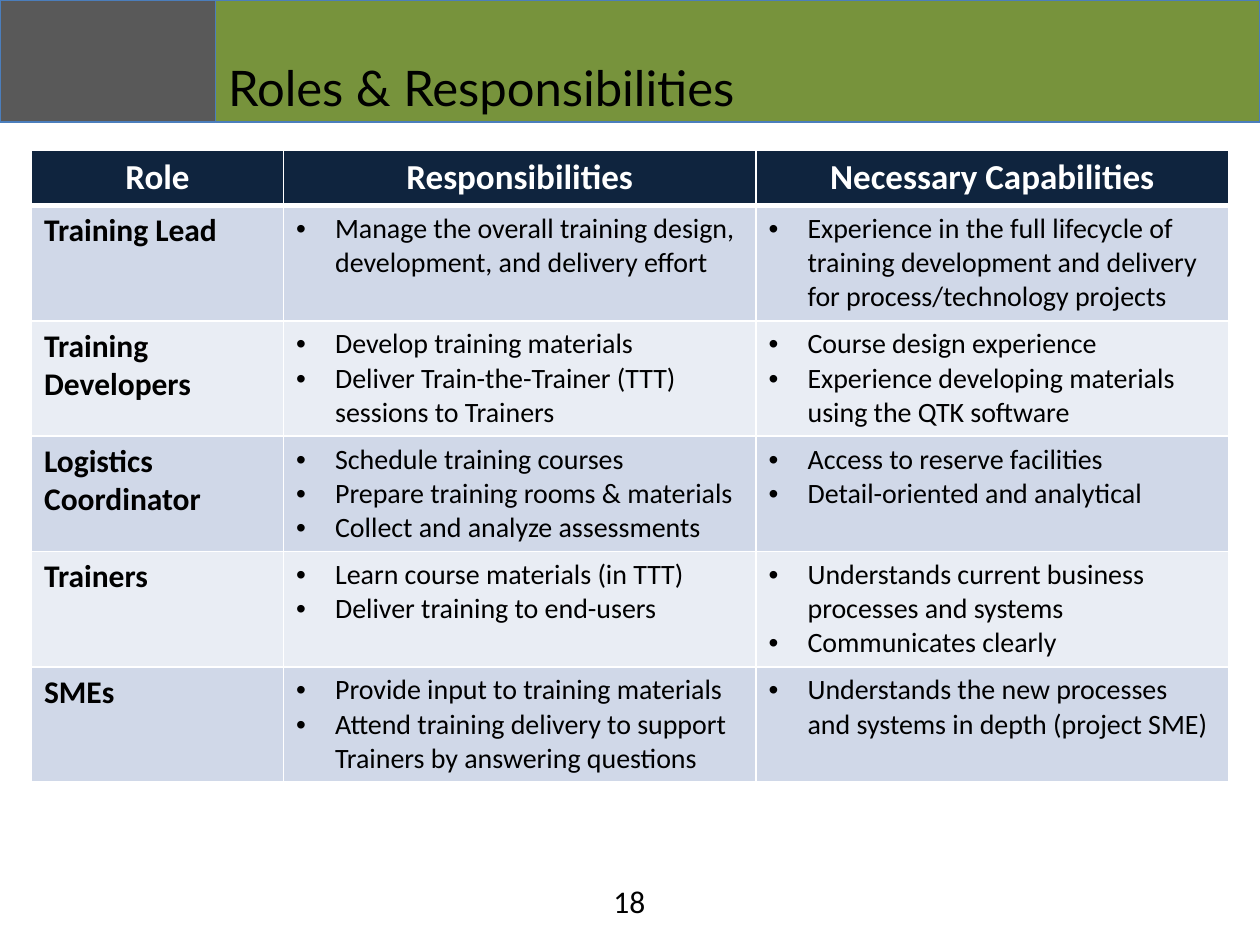
from lxml import etree
from pptx import Presentation
from pptx.dml.color import RGBColor
from pptx.enum import shapes, text
from pptx.oxml.ns import qn
from pptx.util import Inches, Pt

BLACK, WHITE = "000000", "FFFFFF"
HEADER_FILL = "0F243E"
BAND_FILLS = ("D0D8E8", "E9EDF4")
HEADINGS = ("Role", "Responsibilities", "Necessary Capabilities")
ROLES = [
    ("Training Lead",
     ["Manage the overall training design, development, and delivery effort"],
     ["Experience in the full lifecycle of training development and delivery "
      "for process/technology projects"]),
    ("Training Developers",
     ["Develop training materials",
      "Deliver Train-the-Trainer (TTT) sessions to Trainers"],
     ["Course design experience",
      "Experience developing materials using the QTK software"]),
    ("Logistics Coordinator",
     ["Schedule training courses",
      "Prepare training rooms & materials",
      "Collect and analyze assessments"],
     ["Access to reserve facilities",
      "Detail-oriented and analytical"]),
    ("Trainers",
     ["Learn course materials (in TTT)",
      "Deliver training to end-users"],
     ["Understands current business processes and systems",
      "Communicates clearly"]),
    ("SMEs",
     ["Provide input to training materials",
      "Attend training delivery to support Trainers by answering questions"],
     ["Understands the new processes and systems in depth (project SME)"]),
]


def color(value):
    return RGBColor.from_string(value)


def set_font(paragraph, size, value=BLACK, bold=False, name="Calibri"):
    font = paragraph.font
    font.name, font.size, font.bold = name, Pt(size), bold
    font.color.rgb = color(value)


def add_bar(slide, left, width, fill):
    bar = slide.shapes.add_shape(shapes.MSO_SHAPE.RECTANGLE, Inches(left), 0,
                                 Inches(width), Inches(0.97))
    bar.shadow.inherit = False
    bar.fill.solid()
    bar.fill.fore_color.rgb = color(fill)
    bar.line.color.rgb = color("4B7EBC")
    bar.line.width = Pt(0.75)


def place_title(slide, wording):
    title = slide.shapes.title
    title.left, title.top = Inches(1.71), 0
    title.width, title.height = Inches(5.21), Inches(0.97)
    slide.shapes._spTree.append(title._element)  # in front of the bars
    frame = title.text_frame
    frame.text = wording
    frame.vertical_anchor = text.MSO_ANCHOR.BOTTOM
    frame.paragraphs[0].alignment = text.PP_ALIGN.LEFT
    set_font(frame.paragraphs[0], 28, name="Lato")


def add_bullet(paragraph):
    properties = paragraph._p.get_or_add_pPr()
    properties.set("marL", str(Inches(0.31)))
    properties.set("indent", str(-Inches(0.31)))
    etree.SubElement(properties, qn("a:buFont"), typeface="Arial")
    etree.SubElement(properties, qn("a:buChar"), char="•")


def style_cell(cell, fill, **border_widths):
    """Draw white borders (1 pt unless given by side), then fill the cell."""
    properties = cell._tc.get_or_add_tcPr()
    for side in "LRTB":
        width = Pt(border_widths.get(side, 1))
        line = etree.SubElement(properties, qn(f"a:ln{side}"), w=str(width))
        solid = etree.SubElement(line, qn("a:solidFill"))
        etree.SubElement(solid, qn("a:srgbClr"), val=WHITE)
    cell.fill.solid()
    cell.fill.fore_color.rgb = color(fill)


def fill_list(cell, items):
    cell.text_frame.text = "\n".join(items)
    for paragraph in cell.text_frame.paragraphs:
        add_bullet(paragraph)
        set_font(paragraph, 16)


def add_roles_table(slide):
    table = slide.shapes.add_table(len(ROLES) + 1, len(HEADINGS), Inches(0.25), Inches(1.19),
                                   Inches(9.5), Inches(4.93)).table
    for column, width in zip(table.columns, (2, 3.75, 3.75)):
        column.width = Inches(width)
    for index, row in enumerate(table.rows):
        row.height = Inches(0.9 if index else 0.43)

    for cell, heading in zip(table.rows[0].cells, HEADINGS):
        style_cell(cell, HEADER_FILL, B=3)
        cell.text = heading
        paragraph = cell.text_frame.paragraphs[0]
        paragraph.alignment = text.PP_ALIGN.CENTER
        set_font(paragraph, 20, WHITE, bold=True)

    for index, (role, *lists) in enumerate(ROLES):
        role_cell, *list_cells = table.rows[index + 1].cells
        top = 1 if index else 3
        for cell in (role_cell, *list_cells):
            style_cell(cell, BAND_FILLS[index % 2], T=top)
        role_cell.text = role
        set_font(role_cell.text_frame.paragraphs[0], 18, bold=True)
        for cell, items in zip(list_cells, lists):
            fill_list(cell, items)


def add_page_number(slide, number):
    box = slide.shapes.add_textbox(Inches(3.83), Inches(6.95), Inches(2.33), Inches(0.4))
    box.text_frame.word_wrap = True
    paragraph = box.text_frame.paragraphs[0]
    paragraph.text = str(number)
    paragraph.alignment = text.PP_ALIGN.CENTER
    set_font(paragraph, 18)


def main():
    deck = Presentation()
    deck.slide_width, deck.slide_height = Inches(10), Inches(7.5)
    slide = deck.slides.add_slide(deck.slide_layouts[5])
    add_bar(slide, 0, 1.71, "595959")
    add_bar(slide, 1.71, 8.29, "77933C")
    place_title(slide, "Roles & Responsibilities")
    add_roles_table(slide)
    add_page_number(slide, 18)
    deck.save("out.pptx")


if __name__ == "__main__":
    main()
